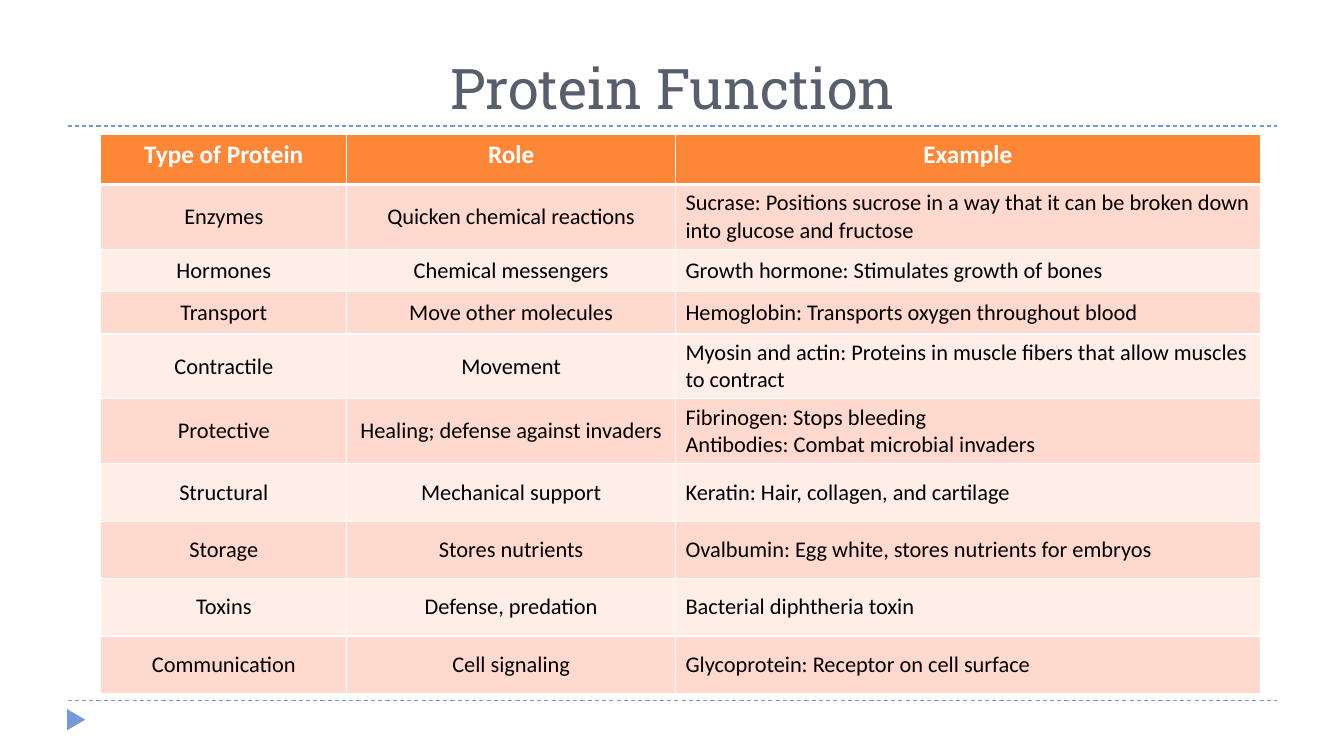
from lxml.etree import SubElement as Sub
from pptx import Presentation
from pptx.dml.color import RGBColor
from pptx.enum.dml import MSO_LINE as Dash
from pptx.enum.shapes import MSO_CONNECTOR as Conn, MSO_SHAPE as Shape
from pptx.enum.text import MSO_ANCHOR as Anchor, PP_ALIGN as Align
from pptx.oxml.ns import qn
from pptx.util import Inches, Pt

WHITE = RGBColor(0xFF, 0xFF, 0xFF)
BLACK = RGBColor(0x00, 0x00, 0x00)
SLATE = RGBColor(0x57, 0x5F, 0x6D)
BLUE = RGBColor(0x75, 0x98, 0xD9)
ORANGE = RGBColor(0xFE, 0x86, 0x37)
PEACH = RGBColor(0xFF, 0xD9, 0xCE)
PALE = RGBColor(0xFF, 0xED, 0xE8)

TITLE = {"name": "Roboto Slab", "size": Pt(40), "bold": False}
HEAD = {"name": "Calibri", "size": Pt(18), "bold": True}
BODY = {"name": "Calibri", "size": Pt(16), "bold": False}

WIDTHS = [2.44, 3.26, 5.8]
HEIGHTS = [0.5, 0.64, 0.42, 0.42, 0.64, 0.64] + [0.57] * 4
ROWS = [
    ("Type of Protein", "Role", "Example"),
    ("Enzymes", "Quicken chemical reactions",
     "Sucrase: Positions sucrose in a way that it can be broken down "
     "into glucose and fructose"),
    ("Hormones", "Chemical messengers",
     "Growth hormone: Stimulates growth of bones"),
    ("Transport", "Move other molecules",
     "Hemoglobin: Transports oxygen throughout blood"),
    ("Contractile", "Movement",
     "Myosin and actin: Proteins in muscle fibers that allow muscles "
     "to contract"),
    ("Protective", "Healing; defense against invaders",
     "Fibrinogen: Stops bleeding\nAntibodies: Combat microbial invaders"),
    ("Structural", "Mechanical support",
     "Keratin: Hair, collagen, and cartilage"),
    ("Storage", "Stores nutrients",
     "Ovalbumin: Egg white, stores nutrients for embryos"),
    ("Toxins", "Defense, predation", "Bacterial diphtheria toxin"),
    ("Communication", "Cell signaling",
     "Glycoprotein: Receptor on cell surface"),
]


def set_text(frame, text, style, color, align):
    frame.text = text
    for para in frame.paragraphs:
        para.alignment = align
        for key, value in style.items():
            setattr(para.font, key, value)
        para.font.color.rgb = color


def add_title(slide, text):
    title = slide.shapes.title
    title.left, title.top = Inches(0.67), Inches(0.17)
    title.width, title.height = Inches(12), Inches(1.08)
    title.text_frame.vertical_anchor = Anchor.BOTTOM
    set_text(title.text_frame, text, TITLE, SLATE, Align.CENTER)


def add_rule(slide, y):
    rule = slide.shapes.add_connector(
        Conn.STRAIGHT, Inches(0.67), Inches(y), Inches(12.67), Inches(y))
    rule.line.color.rgb = BLUE
    rule.line.width = Pt(0.75)
    rule.line.dash_style = Dash.DASH
    Sub(rule._element.spPr, qn("a:effectLst"))


def add_marker(slide):
    mark = slide.shapes.add_shape(
        Shape.ISOSCELES_TRIANGLE,
        Inches(0.65), Inches(7.05), Inches(0.21), Inches(0.18))
    mark.rotation = 90
    mark.shadow.inherit = False
    mark.fill.solid()
    mark.fill.fore_color.rgb = BLUE
    mark.line.fill.background()


def set_edges(cell, top, bottom):
    """Draw white cell borders; call before the cell gets its fill."""
    props = cell._tc.get_or_add_tcPr()
    for side, width in {"L": 1, "R": 1, "T": top, "B": bottom}.items():
        edge = Sub(props, qn(f"a:ln{side}"), w=str(Pt(width)))
        fill = Sub(edge, qn("a:solidFill"))
        Sub(fill, qn("a:srgbClr"), val=str(WHITE))


def fill_cell(cell, text, row, col):
    head = row == 0
    set_edges(cell, 3 if row == 1 else 1, 3 if head else 1)
    cell.fill.solid()
    cell.fill.fore_color.rgb = ORANGE if head else PEACH if row % 2 else PALE
    cell.vertical_anchor = Anchor.TOP if head else Anchor.MIDDLE
    align = Align.CENTER if head or col < 2 else Align.LEFT
    set_text(cell.text_frame, text, HEAD if head else BODY,
             WHITE if head else BLACK, align)


def add_grid(slide):
    grid = slide.shapes.add_table(
        len(ROWS), len(WIDTHS), Inches(1), Inches(1.33),
        Inches(sum(WIDTHS)), Inches(sum(HEIGHTS))).table
    for col, width in zip(grid.columns, WIDTHS):
        col.width = Inches(width)
    for row, height in zip(grid.rows, HEIGHTS):
        row.height = Inches(height)
    for i, texts in enumerate(ROWS):
        for j, text in enumerate(texts):
            fill_cell(grid.cell(i, j), text, i, j)


def main():
    deck = Presentation()
    deck.slide_width, deck.slide_height = Inches(13.33), Inches(7.5)
    slide = deck.slides.add_slide(deck.slide_layouts[5])
    for y in (6.95, 1.25):
        add_rule(slide, y)
    add_marker(slide)
    add_title(slide, "Protein Function")
    add_grid(slide)
    deck.save("out.pptx")


if __name__ == "__main__":
    main()
